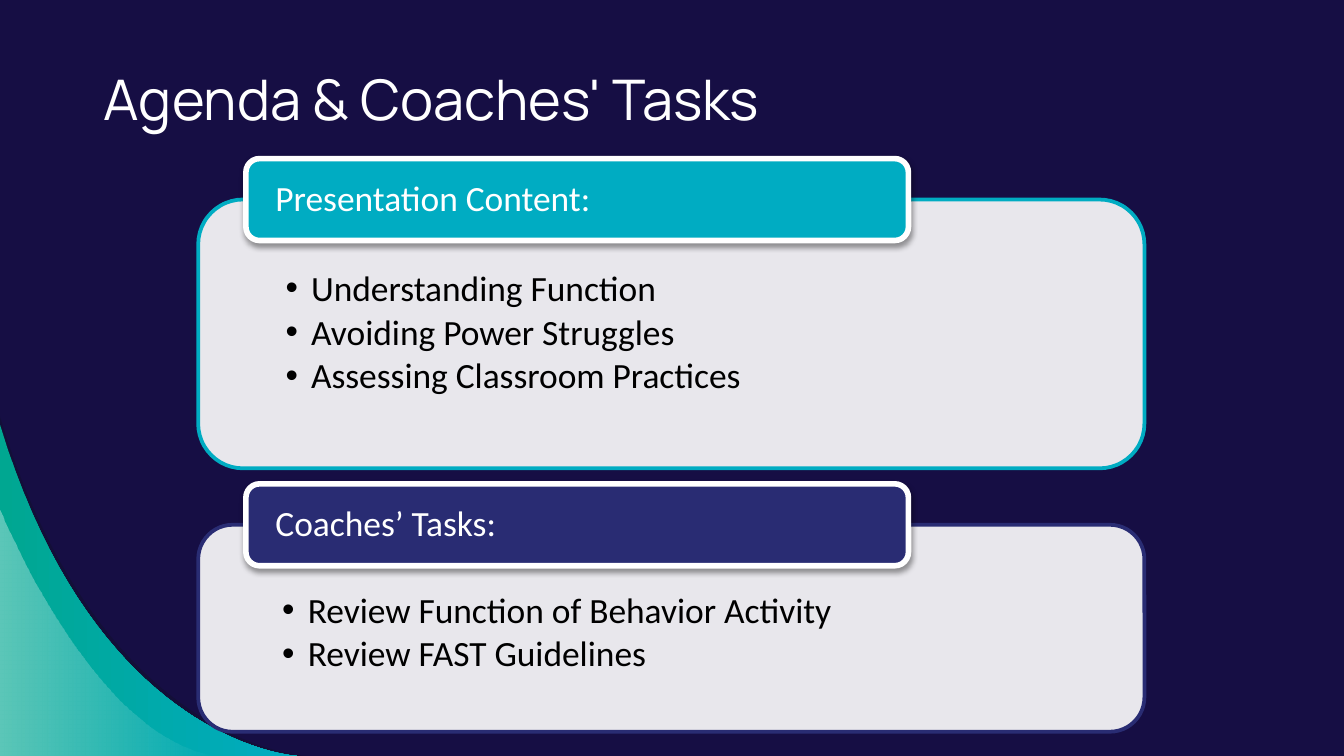
from dataclasses import dataclass

from lxml import etree
from pptx import Presentation
from pptx import util as u
from pptx.dml.color import RGBColor
from pptx.enum import shapes, text
from pptx.oxml.ns import qn

SCALE = 4572
WIDTH, HEIGHT = 2000, 1125


@dataclass(frozen=True)
class Theme:
    night: str = "160E44"
    shade: str = "12102F"
    teal: str = "00ACC2"
    green: str = "00A791"
    navy: str = "292C73"
    white: str = "FFFFFF"
    black: str = "000000"
    title_font: str = "Manrope"
    body_font: str = "Calibri"
    title_size: int = 30
    body_size: int = 19


T = Theme()


def px(n):
    return u.Emu(n * SCALE)


def rgb(value):
    return RGBColor.from_string(value)


def assign(obj, values):
    for name, value in values.items():
        setattr(obj, name, value)


def add(parent, tag, **attrs):
    return etree.SubElement(parent, qn(tag), {k: str(v) for k, v in attrs.items()})


def set_alpha(color_parent, percent):
    color = next(color_parent.iter(qn("a:srgbClr")))
    add(color, "a:alpha", val=percent * 1000)


def fill_solid(sp, color, alpha=100):
    sp.fill.solid()
    sp.fill.fore_color.rgb = rgb(color)
    if alpha < 100:
        set_alpha(sp._element.spPr.find(qn("a:solidFill")), alpha)


def fill_gradient(sp, stops):
    sp.fill.gradient()
    sp.fill.gradient_angle = 0
    for stop, (color, _) in zip(sp.fill.gradient_stops, stops):
        stop.color.rgb = rgb(color)
    for gs, (_, alpha) in zip(sp._element.spPr.iter(qn("a:gs")), stops):
        if alpha < 100:
            set_alpha(gs, alpha)


def bezier(points, steps=40):
    for i in range(steps + 1):
        t = i / steps
        weights = ((1 - t) ** 3, 3 * t * (1 - t) ** 2, 3 * t * t * (1 - t), t ** 3)
        yield tuple(round(SCALE * sum(w * pt[axis] for w, pt in zip(weights, points)))
                    for axis in (0, 1))


def add_wave(s, points):
    start, *rest = bezier(points)
    builder = s.shapes.build_freeform(*start)
    builder.add_line_segments(rest + [(0, px(HEIGHT))], close=True)
    sp = builder.convert_to_shape()
    sp.shadow.inherit = False
    sp.line.fill.background()
    return sp


def add_round_rect(s, box, fill, alpha, line, width):
    sp = s.shapes.add_shape(shapes.MSO_SHAPE.ROUNDED_RECTANGLE, *map(px, box))
    sp.shadow.inherit = False
    fill_solid(sp, fill, alpha)
    sp.line.color.rgb = rgb(line)
    sp.line.width = u.Pt(width)
    return sp


def add_shadow(sp):
    effects = sp._element.spPr.find(qn("a:effectLst"))
    shadow = add(effects, "a:outerShdw", blurRad=u.Pt(3.1), dist=u.Pt(1.6),
                 dir=90 * 60000, rotWithShape=0)
    add(shadow, "a:srgbClr", val=T.black)
    set_alpha(shadow, 38)


def add_bullet(p):
    pPr = p._p.get_or_add_pPr()
    pPr.set("marL", str(px(38)))
    pPr.set("indent", str(px(-38)))
    add(add(pPr, "a:buClr"), "a:srgbClr", val=T.black)
    add(pPr, "a:buFont", typeface="Arial")
    add(pPr, "a:buChar", char="•")


def set_font(font, name, size, color):
    assign(font, {"name": name, "size": u.Pt(size), "bold": False})
    font.color.rgb = rgb(color)


def set_frame(tf, margins, anchor):
    names = ("margin_left", "margin_top", "margin_right", "margin_bottom")
    assign(tf, dict(zip(names, map(px, margins))))
    assign(tf, {"word_wrap": True, "vertical_anchor": anchor,
                "auto_size": text.MSO_AUTO_SIZE.NONE})


def add_text(s, box, margins, anchor, lines, color, space, bullets=False):
    tf = s.shapes.add_textbox(*map(px, box)).text_frame
    set_frame(tf, margins, anchor)
    for i, line in enumerate(lines):
        p = tf.add_paragraph() if i else tf.paragraphs[0]
        assign(p, {"line_spacing": 0.9, "space_after": u.Pt(T.body_size * space),
                   "alignment": text.PP_ALIGN.LEFT, "level": int(bullets)})
        if bullets:
            add_bullet(p)
        r = p.add_run()
        r.text = line
        set_font(r.font, T.body_font, T.body_size, color)


def inset(box, d):
    x, y, w, h = box
    return x + d, y + d, w - 2 * d, h - 2 * d


def add_section(s, top, height, color, heading, items):
    card = (295, top, 1408, height)
    tab = (366, top - 61, 986, 122)
    add_round_rect(s, card, T.white, 90, color, 2)
    add_text(s, inset(card, round(height * 0.049)), (110, 86, 110, 30),
             text.MSO_ANCHOR.TOP, items, T.black, 0.15, bullets=True)
    add_shadow(add_round_rect(s, tab, color, 100, T.white, 3))
    add_text(s, inset(tab, 6), (38, 0, 38, 0), text.MSO_ANCHOR.MIDDLE,
             [heading], T.white, 0.35)


def add_waves(s):
    fill_solid(add_wave(s, [(0, 620), (146, 1108), (454, HEIGHT), (454, HEIGHT)]),
               T.shade, 54)
    fill_gradient(add_wave(s, [(0, 632), (144, 1110), (442, HEIGHT), (442, HEIGHT)]),
                  [(T.green, 100), (T.teal, 100)])
    fill_gradient(add_wave(s, [(0, 760), (0, 760), (138, 1102), (324, HEIGHT)]),
                  [(T.white, 36), (T.white, 0)])


def set_title(s, words):
    sp = s.shapes.title
    box = map(px, (134, 76, 1538, 138))
    assign(sp, dict(zip(("left", "top", "width", "height"), box)))
    tf = sp.text_frame
    set_frame(tf, (20, 20, 20, 20), text.MSO_ANCHOR.TOP)
    p = tf.paragraphs[0]
    p.alignment = text.PP_ALIGN.LEFT
    r = p.add_run()
    r.text = words
    set_font(r.font, T.title_font, T.title_size, T.white)


def main():
    prs = Presentation()
    assign(prs, {"slide_width": px(WIDTH), "slide_height": px(HEIGHT)})
    s = prs.slides.add_slide(prs.slide_layouts[5])
    fill = s.background.fill
    fill.solid()
    fill.fore_color.rgb = rgb(T.night)
    add_waves(s)
    add_section(s, 297, 400, T.teal, "Presentation Content:",
                ["Understanding Function", "Avoiding Power Struggles",
                 "Assessing Classroom Practices"])
    add_section(s, 781, 308, T.navy, "Coaches’ Tasks:",
                ["Review Function of Behavior Activity", "Review FAST Guidelines"])
    set_title(s, "Agenda & Coaches' Tasks")
    prs.save("out.pptx")


if __name__ == "__main__":
    main()
